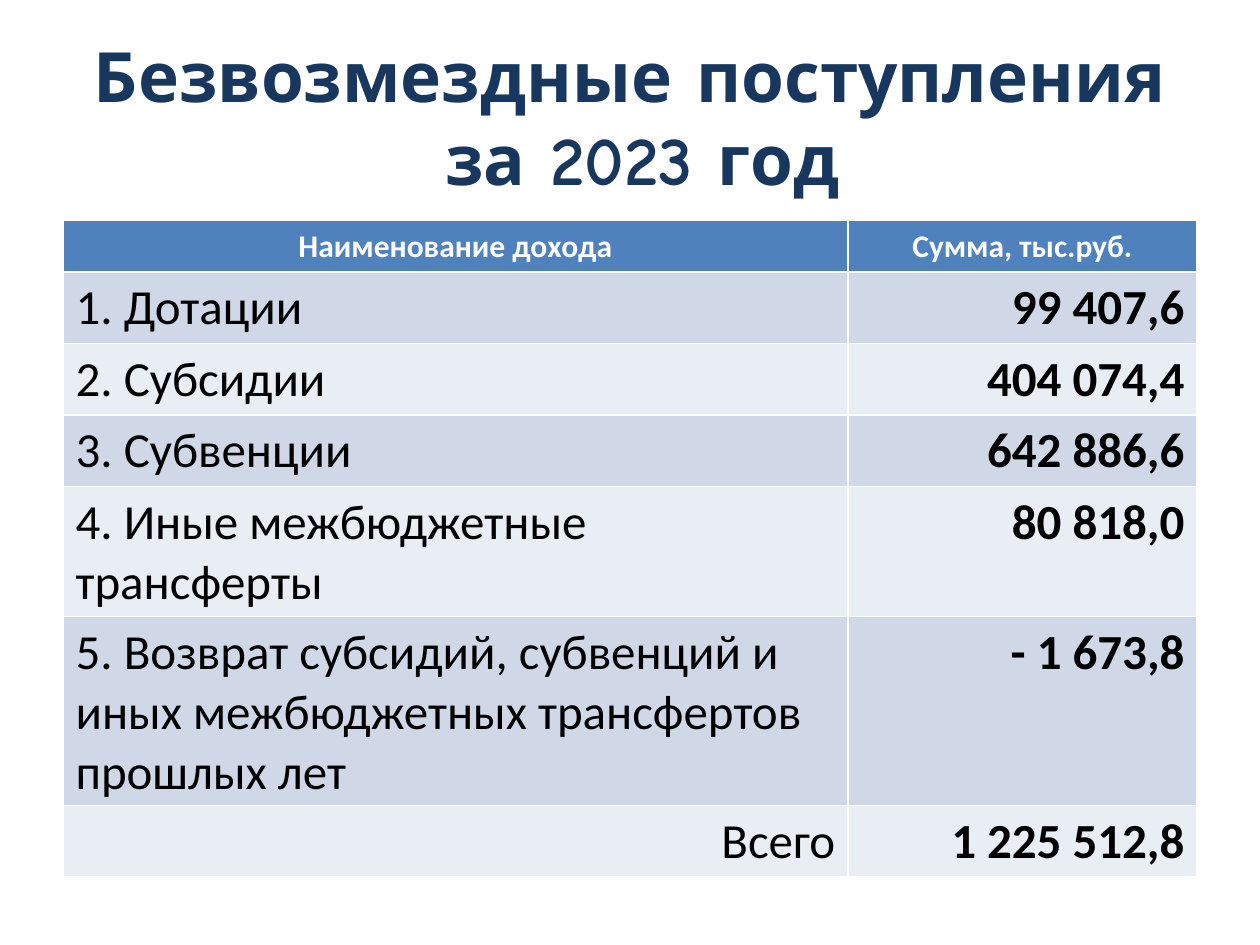
from dataclasses import dataclass

from pptx import Presentation
from pptx.dml.color import RGBColor
from pptx.enum.text import MSO_ANCHOR, PP_ALIGN
from pptx.util import Cm, Pt

LEFT, CENTER, RIGHT = PP_ALIGN.LEFT, PP_ALIGN.CENTER, PP_ALIGN.RIGHT
MIDDLE = MSO_ANCHOR.MIDDLE


@dataclass(frozen=True)
class Theme:
    title_font: str = "Comic Neue"
    table_font: str = "Calibri"
    title_size: float = 39.6
    header_size: float = 18
    body_size: float = 28
    title_color: str = "17375E"
    header_color: str = "FFFFFF"
    body_color: str = "000000"
    header_fill: str = "4F81BD"
    band_fills: tuple = ("D0D8E8", "E9EDF4")


THEME = Theme()

TITLE = "Безвозмездные поступления\v за 2023 год"
HEADERS = ("Наименование дохода", "Сумма, тыс.руб.")
INCOME = (
    ("1. Дотации", "99 407,6"),
    ("2. Субсидии", "404 074,4"),
    ("3. Субвенции", "642 886,6"),
    ("4. Иные межбюджетные трансферты", "80 818,0"),
    ("5. Возврат субсидий, субвенций и иных межбюджетных трансфертов прошлых лет",
     "- 1 673,8"),
    ("Всего", "1 225 512,8"),
)

MARGIN = Cm(1.27)
COLUMN_WIDTHS = (Cm(15.82), Cm(7.04))
ROW_HEIGHT = Cm(1.03)


def write_paragraph(frame, text, font, size, color, bold, align):
    paragraph = frame.paragraphs[0]
    paragraph.text = text
    paragraph.alignment = align
    paragraph.font.name = font
    paragraph.font.size = Pt(size)
    paragraph.font.bold = bold
    paragraph.font.color.rgb = RGBColor.from_string(color)


def add_title(slide):
    box = slide.shapes.add_textbox(MARGIN, Cm(0.76), Cm(22.86), Cm(3.18))
    frame = box.text_frame
    frame.word_wrap = True
    frame.vertical_anchor = MIDDLE
    write_paragraph(frame, TITLE, THEME.title_font, THEME.title_size,
                    THEME.title_color, True, CENTER)


def fill_cell(cell, text, fill, size, color, bold, align):
    cell.fill.solid()
    cell.fill.fore_color.rgb = RGBColor.from_string(fill)
    write_paragraph(cell.text_frame, text, THEME.table_font, size, color, bold, align)


def add_income_table(slide):
    row_count = len(INCOME) + 1
    table = slide.shapes.add_table(
        row_count, len(HEADERS), MARGIN, Cm(4.45),
        sum(COLUMN_WIDTHS), ROW_HEIGHT * row_count).table
    for column, width in zip(table.columns, COLUMN_WIDTHS):
        column.width = width

    # Header row
    for index, header in enumerate(HEADERS):
        fill_cell(table.cell(0, index), header, THEME.header_fill,
                  THEME.header_size, THEME.header_color, True, CENTER)

    # Banded income rows, with the total last
    for row, (name, amount) in enumerate(INCOME, start=1):
        fill = THEME.band_fills[(row - 1) % 2]
        name_align = RIGHT if row == len(INCOME) else LEFT
        fill_cell(table.cell(row, 0), name, fill,
                  THEME.body_size, THEME.body_color, False, name_align)
        fill_cell(table.cell(row, 1), amount, fill,
                  THEME.body_size, THEME.body_color, True, RIGHT)


def main():
    deck = Presentation()
    deck.slide_width, deck.slide_height = Cm(25.4), Cm(19.05)
    slide = deck.slides.add_slide(deck.slide_layouts[6])
    add_title(slide)
    add_income_table(slide)
    deck.save("out.pptx")


if __name__ == "__main__":
    main()
